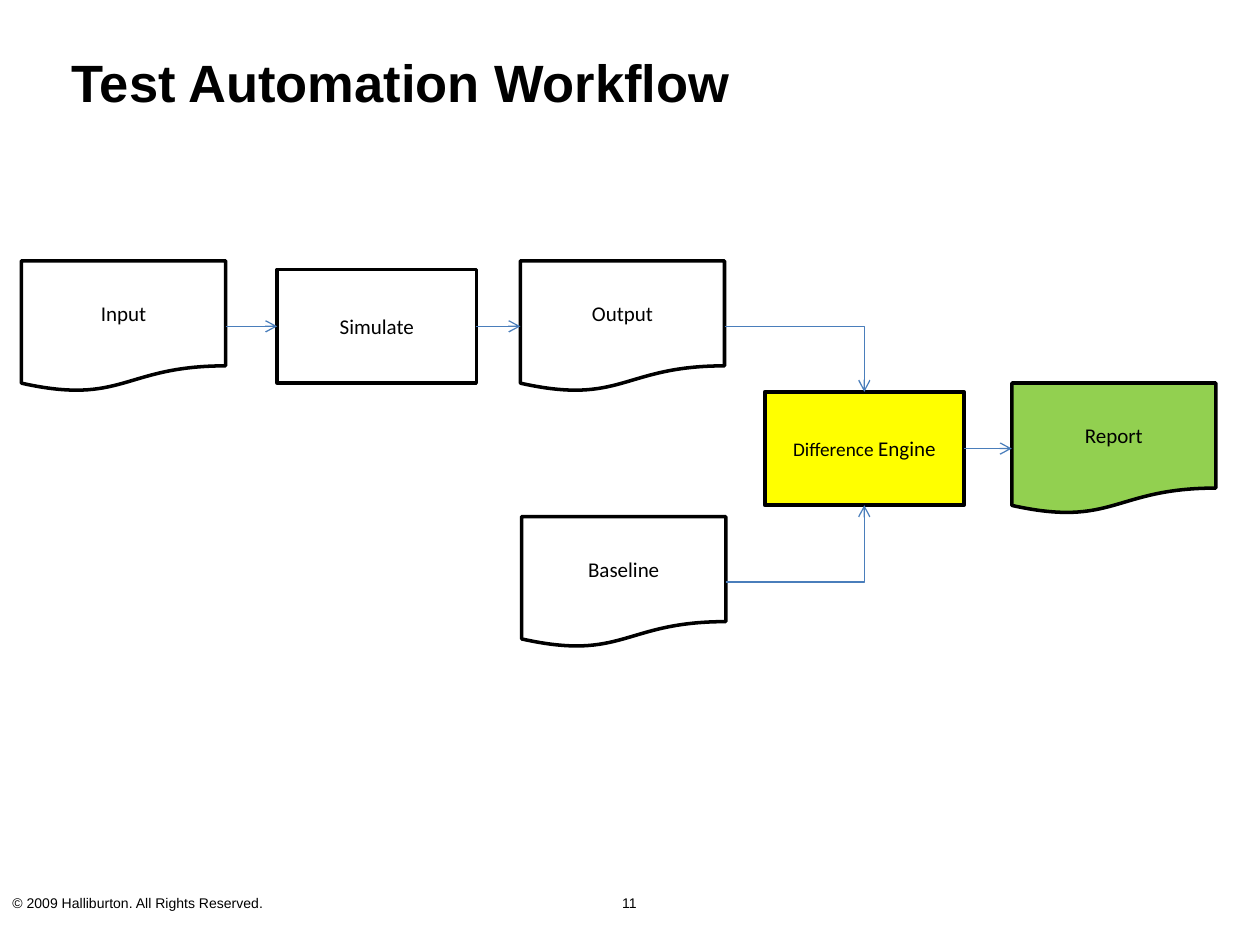
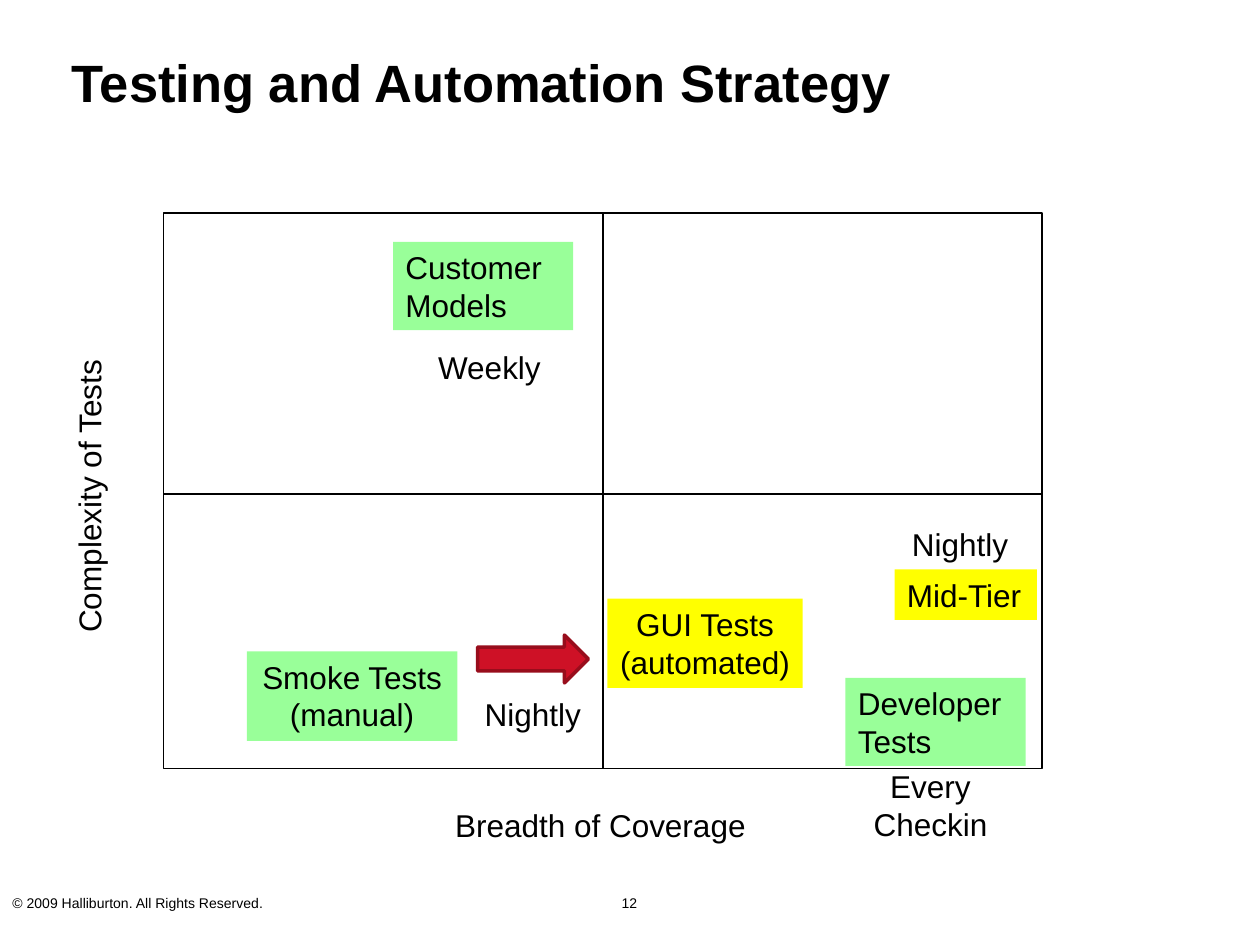
from lxml import etree
from pptx import Presentation
from pptx.dml.color import RGBColor
from pptx.enum.shapes import MSO_CONNECTOR, MSO_SHAPE
from pptx.enum.text import MSO_ANCHOR, MSO_AUTO_SIZE, PP_ALIGN
from pptx.oxml.ns import qn
from pptx.util import Inches, Pt

RECT, ARROW = MSO_SHAPE.RECTANGLE, MSO_SHAPE.RIGHT_ARROW
DOCUMENT, PROCESS = MSO_SHAPE.FLOWCHART_DOCUMENT, MSO_SHAPE.FLOWCHART_PROCESS
STRAIGHT, ELBOW = MSO_CONNECTOR.STRAIGHT, MSO_CONNECTOR.ELBOW
LEFT, CENTER, RIGHT = PP_ALIGN.LEFT, PP_ALIGN.CENTER, PP_ALIGN.RIGHT
TOP, MIDDLE = MSO_ANCHOR.TOP, MSO_ANCHOR.MIDDLE
SIDE_TOP, SIDE_LEFT, SIDE_BOTTOM, SIDE_RIGHT = range(4)

THEME = {
    "black": RGBColor.from_string("000000"),
    "white": RGBColor.from_string("FFFFFF"),
    "yellow": RGBColor.from_string("FFFF00"),
    "report": RGBColor.from_string("92D050"),
    "mint": RGBColor.from_string("99FF99"),
    "flow": RGBColor.from_string("4A7EBB"),
    "red": RGBColor.from_string("CE1126"),
    "dark_red": RGBColor.from_string("980D1C"),
    "title": {"name": "Arial", "size": Pt(30), "bold": True},
    "footer": {"name": "Arial", "size": Pt(8)},
    "step": {"name": "Calibri", "size": Pt(12)},
    "small_step": {"name": "Calibri", "size": Pt(11)},
    "label": {"name": "Arial", "size": Pt(18)},
    "thin": Pt(0.75),
    "thick": Pt(2),
}


def write(holder, runs, align=LEFT, anchor=TOP):
    frame = holder.text_frame
    frame_format = {"word_wrap": True, "auto_size": MSO_AUTO_SIZE.NONE, "vertical_anchor": anchor}
    for attribute, value in frame_format.items():
        setattr(frame, attribute, value)
    paragraph = frame.paragraphs[0]
    paragraph.alignment = align
    for text, style in runs:
        run = paragraph.add_run()
        run.text = text
        for attribute, value in THEME[style].items():
            setattr(run.font, attribute, value)
        run.font.color.rgb = THEME["black"]


def outline(item, color, width):
    item.line.color.rgb = THEME[color]
    item.line.width = THEME[width]
    properties = item.element.spPr
    if properties.find(qn("a:effectLst")) is None:
        etree.SubElement(properties, qn("a:effectLst"))


prs = Presentation()
prs.slide_width, prs.slide_height = Inches(10), Inches(7.5)

slides = []
for number, heading in [(11, "Test Automation Workflow"), (12, "Testing and Automation Strategy")]:
    slide = prs.slides.add_slide(prs.slide_layouts[5])
    title = slide.shapes.title
    title.left, title.top, title.width, title.height = map(Inches, (0.47, 0.18, 9.03, 0.94))
    write(title, [(heading, "title")], anchor=MIDDLE)
    copyright_line = slide.shapes.add_textbox(*map(Inches, (0, 7.05, 3.17, 0.26)))
    write(copyright_line, [("© 2009 Halliburton. All Rights Reserved.", "footer")])
    page_number = slide.shapes.add_textbox(*map(Inches, (3.83, 7.05, 2.33, 0.3)))
    write(page_number, [(str(number), "footer")], CENTER)
    slides.append(slide)
workflow, strategy = slides

step_sizes = {DOCUMENT: (1.62, 1.04), PROCESS: (1.58, 0.9)}
steps = {}
for name, preset, left, top, fill in [
    ("Input", DOCUMENT, 0.17, 2.07, "white"),
    ("Output", DOCUMENT, 4.13, 2.07, "white"),
    ("Baseline", DOCUMENT, 4.14, 4.1, "white"),
    ("Simulate", PROCESS, 2.2, 2.14, "white"),
    ("Engine", PROCESS, 6.07, 3.11, "yellow"),
    ("Report", DOCUMENT, 8.03, 3.04, "report"),
]:
    step = workflow.shapes.add_shape(preset, *map(Inches, (left, top, *step_sizes[preset])))
    step.shadow.inherit = False
    step.fill.solid()
    step.fill.fore_color.rgb = THEME[fill]
    outline(step, "black", "thick")
    prefix = [("Difference ", "small_step")] if name == "Engine" else []
    write(step, prefix + [(name, "step")], CENTER, MIDDLE)
    steps[name] = step

for source, target, route, entry_side in [
    ("Input", "Simulate", STRAIGHT, SIDE_LEFT),
    ("Simulate", "Output", STRAIGHT, SIDE_LEFT),
    ("Output", "Engine", ELBOW, SIDE_TOP),
    ("Baseline", "Engine", ELBOW, SIDE_BOTTOM),
    ("Engine", "Report", STRAIGHT, SIDE_LEFT),
]:
    flow = workflow.shapes.add_connector(route, 0, 0, 0, 0)
    flow.begin_connect(steps[source], SIDE_RIGHT)
    flow.end_connect(steps[target], entry_side)
    if route == ELBOW:
        flow.element.spPr.find(qn("a:prstGeom")).set("prst", "bentConnector2")
    outline(flow, "flow", "thin")
    etree.SubElement(flow.element.spPr.find(qn("a:ln")), qn("a:tailEnd"), type="arrow")

quadrants = strategy.shapes.add_shape(RECT, *map(Inches, (1.3, 1.69, 6.97, 4.41)))
quadrants.shadow.inherit = False
quadrants.fill.background()
outline(quadrants, "black", "thin")
complexity_divider = strategy.shapes.add_connector(STRAIGHT, *map(Inches, (1.3, 3.92, 8.27, 3.92)))
breadth_divider = strategy.shapes.add_connector(STRAIGHT, 0, 0, 0, 0)
breadth_divider.begin_connect(quadrants, SIDE_TOP)
breadth_divider.end_connect(quadrants, SIDE_BOTTOM)
for divider in (complexity_divider, breadth_divider):
    outline(divider, "black", "thin")

for text, box, align, fill, rotation in [
    ("Breadth of Coverage", (3.36, 6.35, 2.81, 0.4), CENTER, None, 0),
    ("Complexity of Tests", (-0.62, 3.74, 2.65, 0.4), CENTER, None, 270),
    ("Mid-Tier", (7.1, 4.52, 1.13, 0.4), LEFT, "yellow", 0),
    ("Developer Tests", (6.71, 5.38, 1.43, 0.7), LEFT, "mint", 0),
    ("Customer Models", (3.12, 1.92, 1.43, 0.7), LEFT, "mint", 0),
    ("GUI Tests (automated)", (4.82, 4.75, 1.55, 0.71), CENTER, "yellow", 0),
    ("Every Checkin", (6.67, 6.04, 1.43, 0.71), CENTER, None, 0),
    ("Nightly", (3.28, 5.47, 1.43, 0.4), RIGHT, None, 0),
    ("Nightly", (6.67, 4.12, 1.43, 0.4), RIGHT, None, 0),
    ("Weekly", (3.17, 2.71, 1.43, 0.4), CENTER, None, 0),
    ("Smoke Tests (manual)", (1.96, 5.17, 1.67, 0.71), CENTER, "mint", 0),
]:
    place = map(Inches, box)
    if fill:
        test_label = strategy.shapes.add_shape(RECT, *place)
        test_label.shadow.inherit = False
        test_label.fill.solid()
        test_label.fill.fore_color.rgb = THEME[fill]
        test_label.line.fill.background()
    else:
        test_label = strategy.shapes.add_textbox(*place)
    test_label.rotation = rotation
    write(test_label, [(text, "label")], align)

automation_step = strategy.shapes.add_shape(ARROW, *map(Inches, (3.79, 5.04, 0.88, 0.38)))
automation_step.shadow.inherit = False
automation_step.fill.solid()
automation_step.fill.fore_color.rgb = THEME["red"]
outline(automation_step, "dark_red", "thick")

prs.save("out.pptx")
